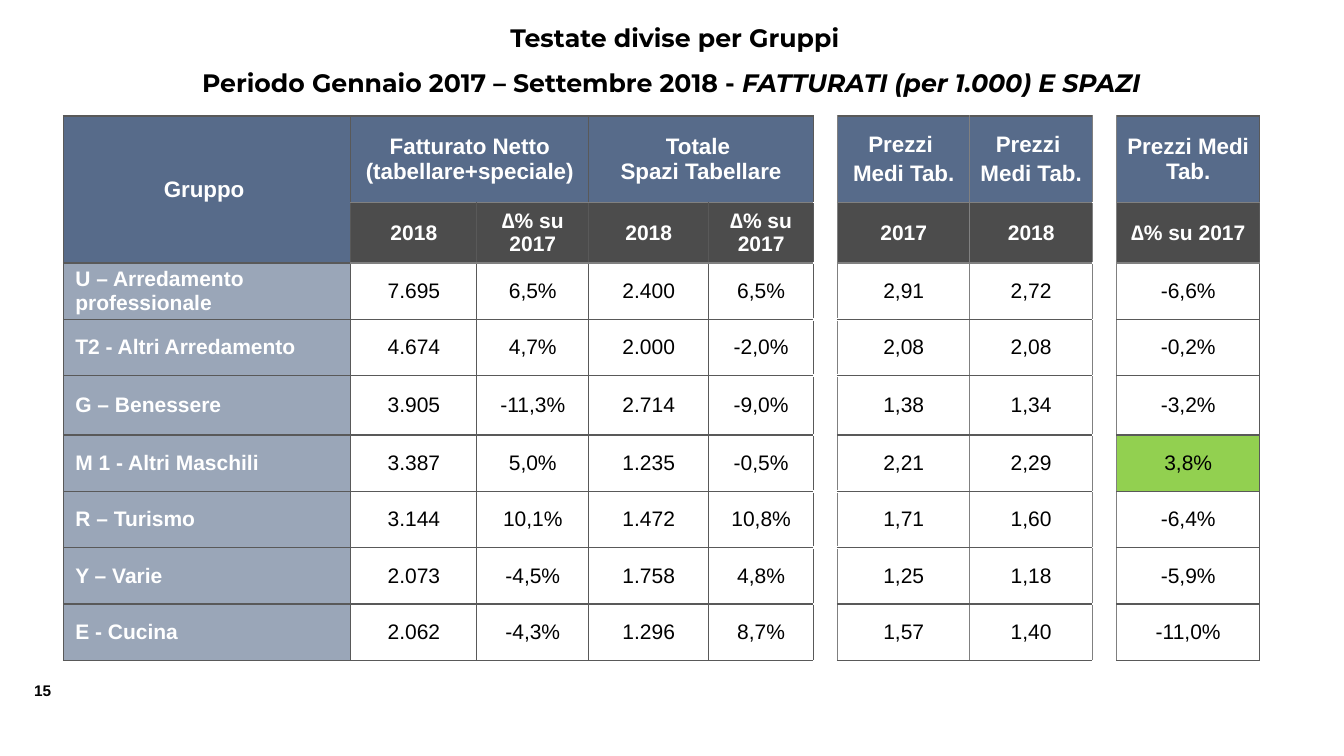
from dataclasses import dataclass
from itertools import product

from pptx import Presentation
from pptx.dml.color import RGBColor
from pptx.enum.text import MSO_ANCHOR, PP_ALIGN
from pptx.oxml.ns import qn
from pptx.slide import Slide
from pptx.table import Table, _Cell
from pptx.text.text import Font
from pptx.util import Pt
from lxml.etree import SubElement

COLOURS = {
    "black": "000000",
    "white": "FFFFFF",
    "blue": "576B8A",
    "green": "92D050",
    "dark_line": "595959",
    "grey_line": "808080",
}
PLAIN_TABLE_STYLE = "{2D5ABB26-0587-4C30-8999-92F81FD0307C}"
COLUMN_WIDTHS = [205.2, 90, 79.9, 85.8, 74.8, 17.2, 94.5, 87.6, 17.2, 102.3]
ROW_HEIGHTS = [61.9, 43.2, 40.3, 40.3, 42.2, 40.3, 40.3, 40.3, 40.3]
GAP_COLUMNS = (5, 8)


@dataclass(frozen=True)
class CellLook:
    size: float
    colour: str
    bold: bool
    fill: str
    opacity: int = 100
    side_margin: float = 7.2
    edge_margin: float = 3.6
    align: PP_ALIGN = PP_ALIGN.CENTER


@dataclass(frozen=True)
class Group:
    name: str
    sales: str
    sales_change: str
    space: str
    space_change: str
    price_2017: str
    price_2018: str
    price_change: str

    def cells(self) -> list[str]:
        return [self.name, self.sales, self.sales_change, self.space, self.space_change,
                "", self.price_2017, self.price_2018, "", self.price_change]


HEADING = CellLook(16, "white", True, "blue")
SUBHEADING = CellLook(15, "white", True, "black", 70)
GROUP_NAME = CellLook(15, "white", True, "blue", 60, 8.4, 0, PP_ALIGN.LEFT)
FIGURE = CellLook(15, "black", False, "white", 100, 0, 0)
RISE = CellLook(15, "black", False, "green", 100, 0, 0)

HEADINGS = ["Gruppo ", "Fatturato Netto (tabellare+speciale)", "", "Totale \nSpazi Tabellare", "",
            "", "Prezzi \nMedi Tab.", "Prezzi \nMedi Tab.", "", "Prezzi Medi Tab."]
SUBHEADINGS = ["", "2018", "∆% su 2017", "2018", "∆% su 2017", "", "2017", "2018", "", "∆% su 2017"]
GROUPS = [
    Group("U – Arredamento professionale", "7.695", "6,5%", "2.400", "6,5%", "2,91", "2,72", "-6,6%"),
    Group("T2 - Altri Arredamento", "4.674", "4,7%", "2.000", "-2,0%", "2,08", "2,08", "-0,2%"),
    Group("G – Benessere", "3.905", "-11,3%", "2.714", "-9,0%", "1,38", "1,34", "-3,2%"),
    Group("M 1 - Altri Maschili", "3.387", "5,0%", "1.235", "-0,5%", "2,21", "2,29", "3,8%"),
    Group("R – Turismo", "3.144", "10,1%", "1.472", "10,8%", "1,71", "1,60", "-6,4%"),
    Group("Y – Varie", "2.073", "-4,5%", "1.758", "4,8%", "1,25", "1,18", "-5,9%"),
    Group("E - Cucina", "2.062", "-4,3%", "1.296", "8,7%", "1,57", "1,40", "-11,0%"),
]


def set_font(font: Font, name: str, size: float, colour: str, bold: bool) -> None:
    font.name = name
    font.size = Pt(size)
    font.bold = bold
    font.color.rgb = RGBColor.from_string(COLOURS[colour])


def look_for(row: int, column: int, text: str) -> CellLook:
    if column in GAP_COLUMNS:
        return FIGURE
    if row == 0:
        return HEADING
    if row == 1:
        return SUBHEADING
    if column == 0:
        return GROUP_NAME
    return RISE if column == 9 and not text.startswith("-") else FIGURE


def border_cell(cell: _Cell, row: int, column: int) -> None:
    def level_line(grey_rows: tuple[int, int]) -> str:
        if column in GAP_COLUMNS:
            return "white"
        return "grey_line" if column > 0 and row in grey_rows else "dark_line"

    first_gap = column == GAP_COLUMNS[0]
    edges = {
        "a:lnL": ("grey_line" if column > 5 else "dark_line", 1),
        "a:lnR": ("grey_line" if 5 <= column <= 8 else "dark_line", 1),
        "a:lnT": (level_line((1, 2)), 2.25 if first_gap and row >= 3 else 1),
        "a:lnB": (level_line((0, 1)), 2.25 if first_gap and 2 <= row <= 7 else 1),
    }
    properties = cell._tc.get_or_add_tcPr()
    for tag, (colour, width) in edges.items():
        line = SubElement(properties, qn(tag), w=str(Pt(width)))
        SubElement(SubElement(line, qn("a:solidFill")), qn("a:srgbClr"), val=COLOURS[colour])


def fill_cell(cell: _Cell, look: CellLook) -> None:
    cell.fill.solid()
    cell.fill.fore_color.rgb = RGBColor.from_string(COLOURS[look.fill])
    if look.opacity < 100:
        colour = cell._tc.get_or_add_tcPr().find(f"{qn('a:solidFill')}/{qn('a:srgbClr')}")
        SubElement(colour, qn("a:alpha"), val=str(look.opacity * 1000))


def write_cell(cell: _Cell, text: str, look: CellLook) -> None:
    cell.vertical_anchor = MSO_ANCHOR.MIDDLE
    cell.margin_left = Pt(look.side_margin)
    cell.margin_right = Pt(look.side_margin if look.align == PP_ALIGN.CENTER else 0)
    cell.margin_top = cell.margin_bottom = Pt(look.edge_margin)
    cell.text_frame.text = text
    for paragraph in cell.text_frame.paragraphs:
        paragraph.alignment = look.align
        set_font(paragraph.font, "Arial", look.size, look.colour, look.bold)


def add_title(page: Slide) -> None:
    box = page.shapes.add_textbox(Pt(79.9), Pt(1.4), Pt(799.2), Pt(77))
    frame = box.text_frame
    frame.word_wrap = True
    first = frame.paragraphs[0]
    first.add_run().text = "Testate divise per Gruppi"
    second = frame.add_paragraph()
    second.add_run().text = "Periodo Gennaio 2017 – Settembre 2018 - "
    span = second.add_run()
    span.text = "FATTURATI (per 1.000) E SPAZI"
    span.font.italic = True
    first._p.get_or_add_pPr().set("marL", str(Pt(5)))
    for paragraph in frame.paragraphs:
        paragraph.alignment = PP_ALIGN.CENTER
        paragraph.line_spacing = 1.5
        set_font(paragraph.font, "Montserrat", 18, "black", True)


def add_page_number(page: Slide) -> None:
    box = page.shapes.add_textbox(Pt(17.3), Pt(483.1), Pt(30.2), Pt(20.9))
    box.text_frame.word_wrap = False
    paragraph = box.text_frame.paragraphs[0]
    paragraph.add_run().text = "15"
    set_font(paragraph.font, "Arial", 11, "black", True)


def add_groups_table(page: Slide) -> Table:
    rows = [HEADINGS, SUBHEADINGS] + [group.cells() for group in GROUPS]
    frame = page.shapes.add_table(len(rows), len(COLUMN_WIDTHS), Pt(45.4), Pt(82.8),
                                  Pt(sum(COLUMN_WIDTHS)), Pt(sum(ROW_HEIGHTS)))
    table = frame.table
    table.first_row = table.horz_banding = False
    table._tbl.tblPr.find(qn("a:tableStyleId")).text = PLAIN_TABLE_STYLE
    for column, width in zip(table.columns, COLUMN_WIDTHS):
        column.width = Pt(width)
    for row, height in zip(table.rows, ROW_HEIGHTS):
        row.height = Pt(height)
    for start, end in [((0, 0), (1, 0)), ((0, 1), (0, 2)), ((0, 3), (0, 4))]:
        table.cell(*start).merge(table.cell(*end))
    for row, column in product(range(len(rows)), range(len(COLUMN_WIDTHS))):
        cell = table.cell(row, column)
        if cell.is_spanned:
            continue
        text = rows[row][column]
        look = look_for(row, column, text)
        border_cell(cell, row, column)
        fill_cell(cell, look)
        if text:
            write_cell(cell, text, look)
    for column in (6, 7):
        table.cell(0, column).text_frame.paragraphs[1].space_before = Pt(3.2)
    return table


def main() -> None:
    deck = Presentation()
    deck.slide_width, deck.slide_height = Pt(960), Pt(540)
    page = deck.slides.add_slide(deck.slide_layouts[6])
    add_page_number(page)
    add_title(page)
    add_groups_table(page)
    deck.save("out.pptx")


if __name__ == "__main__":
    main()
